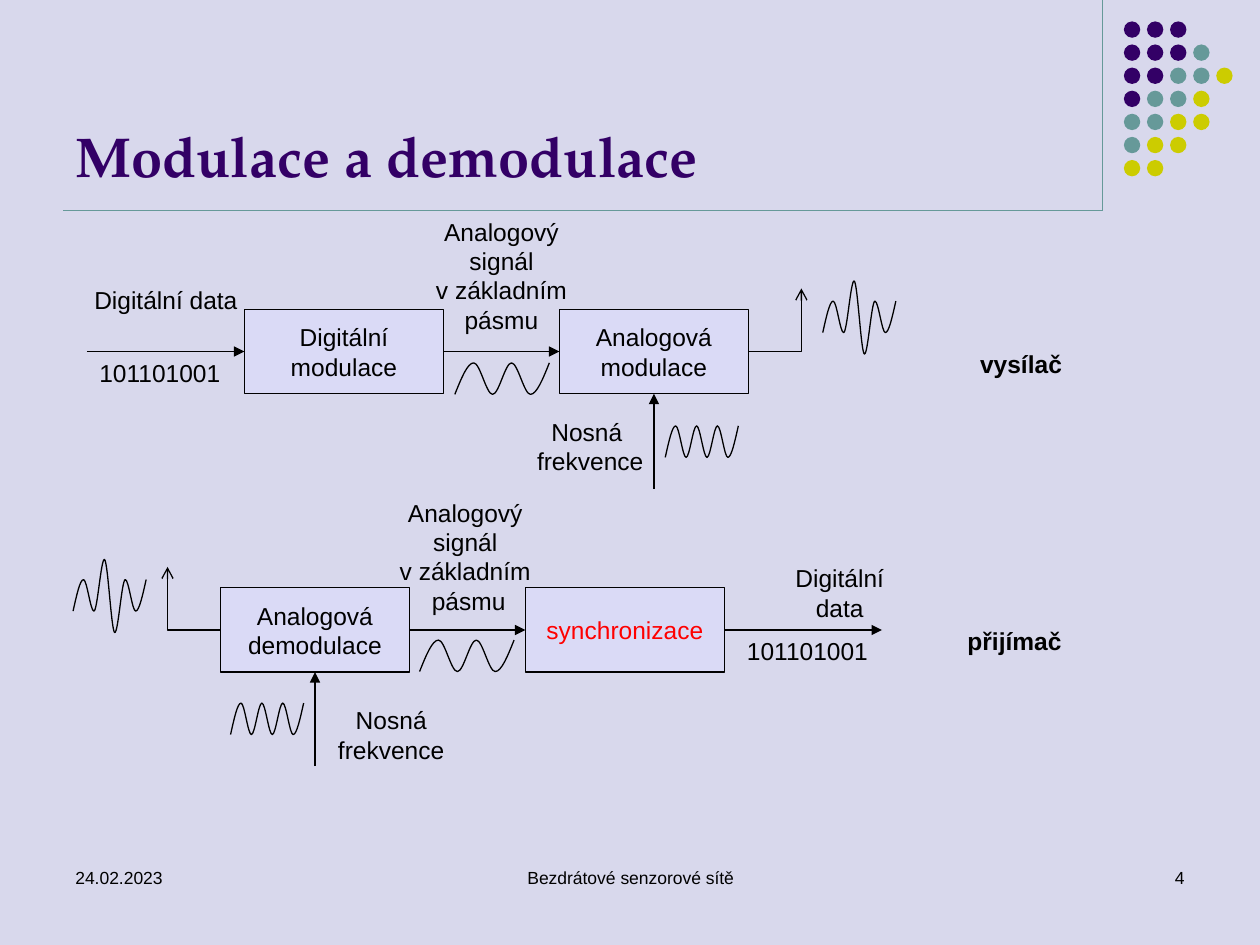
"""Build a slide that shows the modulation and demodulation signal chains."""
from dataclasses import dataclass
from typing import Optional

from lxml.etree import SubElement
from pptx import Presentation
from pptx.dml.color import RGBColor
from pptx.enum.shapes import MSO_CONNECTOR, MSO_SHAPE
from pptx.enum.text import MSO_ANCHOR, MSO_AUTO_SIZE, PP_ALIGN
from pptx.oxml.ns import qn
from pptx.shapes.autoshape import Shape
from pptx.shapes.connector import Connector
from pptx.slide import Slide
from pptx.util import Inches, Pt

BACKGROUND = RGBColor(0xD8, 0xD8, 0xEC)
BLOCK_FILL = RGBColor(0xDA, 0xDA, 0xF6)
BLACK = RGBColor(0x00, 0x00, 0x00)
RED = RGBColor(0xFF, 0x00, 0x00)
PURPLE = RGBColor(0x33, 0x00, 0x66)
TEAL = RGBColor(0x66, 0x99, 0x99)
YELLOW = RGBColor(0xCC, 0xCC, 0x00)

DOT_COLORS = {"P": PURPLE, "T": TEAL, "Y": YELLOW, "B": BACKGROUND}
DOT_ROWS = ("PPP", "PPPT", "PPTTY", "PTTY", "TTYYB", "TYYB", "YYBB", "-B-B")
DOT_PITCH = 0.55 / 3
DOT_SIZE = 0.13
BLOCK_HEIGHT = 0.67
LINE_WIDTH = Pt(0.75)

BASEBAND = (0.25, 0, 0.25, 0, 0.25, 0)
CARRIER = (0.25, 0, 0.25, 0, 0.25, 0, 0.25, 0)
MODULATED = (0.43, 0.18, 0.43, 0.02, 0.6, 0.18, 0.43, 0.18)

Point = tuple[float, float]


@dataclass(frozen=True)
class Block:
    name: str
    text: str
    left: float
    axis: float
    width: float
    color: RGBColor = BLACK


@dataclass(frozen=True)
class Wire:
    start: Point
    end: Point
    origin: str = ""
    target: str = ""
    target_site: int = 1


@dataclass(frozen=True)
class Label:
    text: str
    left: float
    top: float
    width: float
    height: float
    bold: bool = False
    align: PP_ALIGN = PP_ALIGN.CENTER


@dataclass(frozen=True)
class Wave:
    left: float
    top: float
    width: float
    levels: tuple[float, ...]


BLOCKS = (
    Block("synchronizer", "synchronizace", 4.17, 5, 1.58, RED),
    Block("demodulator", "Analogová\ndemodulace", 1.75, 5, 1.5),
    Block("digital", "Digitální\nmodulace", 1.94, 2.79, 1.58),
    Block("analog", "Analogová\nmodulace", 4.44, 2.79, 1.5),
)
WIRES = (
    Wire((5.75, 5), (7, 5), origin="synchronizer"),
    Wire((2.5, 6.08), (2.5, 5.33), target="demodulator", target_site=2),
    Wire((3.25, 5), (4.17, 5), origin="demodulator", target="synchronizer"),
    Wire((0.69, 2.79), (1.94, 2.79), target="digital"),
    Wire((5.19, 3.88), (5.19, 3.13), target="analog", target_site=2),
    Wire((3.52, 2.79), (4.44, 2.79), origin="digital", target="analog"),
)
ANTENNAS = (((1.75, 5), (1.33, 4.5)), ((5.94, 2.79), (6.36, 2.29)))
LABELS = (
    Label("Digitální\ndata", 6.21, 4.42, 0.91, 0.57),
    Label("Nosná\nfrekvence", 2.58, 5.55, 1.05, 0.57),
    Label("Analogový \nsignál \nv základním \npásmu", 3.07, 3.9, 1.3, 1.04),
    Label("101101001", 5.83, 5, 1.17, 0.33, align=PP_ALIGN.LEFT),
    Label("přijímač", 7.58, 4.92, 0.95, 0.34, True, PP_ALIGN.LEFT),
    Label("Digitální data", 0.65, 2.21, 1.34, 0.34, align=PP_ALIGN.LEFT),
    Label("Nosná \nfrekvence", 4.16, 3.26, 1.05, 0.57),
    Label("Analogový\nsignál\nv základním\npásmu", 3.34, 1.67, 1.28, 1.04),
    Label("101101001", 0.69, 2.79, 1.17, 0.33, align=PP_ALIGN.LEFT),
    Label("vysílač", 7.68, 2.72, 0.85, 0.34, True, PP_ALIGN.LEFT),
)
WAVES = (
    Wave(3.33, 5.08, 0.75, BASEBAND),
    Wave(1.83, 5.58, 0.58, CARRIER),
    Wave(0.58, 4.42, 0.58, MODULATED),
    Wave(3.61, 2.88, 0.75, BASEBAND),
    Wave(5.28, 3.38, 0.58, CARRIER),
    Wave(6.53, 2.21, 0.58, MODULATED),
)
FOOTERS = (
    Label("24.02.2023", 0.5, 6.83, 2.33, 0.5, align=PP_ALIGN.LEFT),
    Label("Bezdrátové senzorové sítě", 3.42, 6.83, 3.17, 0.5),
    Label("4", 7.17, 6.83, 2.33, 0.5, align=PP_ALIGN.RIGHT),
)


def write_text(box: Shape, text: str, *, size: float = 14, font: str = "Arial",
               color: RGBColor = BLACK, bold: bool = False, wrap: bool = False,
               align: PP_ALIGN = PP_ALIGN.CENTER,
               anchor: MSO_ANCHOR = MSO_ANCHOR.TOP) -> None:
    frame = box.text_frame
    frame.word_wrap = wrap
    frame.vertical_anchor = anchor
    for index, line in enumerate(text.split("\n")):
        para = frame.add_paragraph() if index else frame.paragraphs[0]
        para.alignment = align
        span = para.add_run()
        span.text = line
        span.font.name = font
        span.font.size = Pt(size)
        span.font.bold = bold
        span.font.color.rgb = color


def add_label(page: Slide, label: Label, **text_format) -> Shape:
    box = page.shapes.add_textbox(Inches(label.left), Inches(label.top),
                                  Inches(label.width), Inches(label.height))
    write_text(box, label.text, bold=label.bold, align=label.align, **text_format)
    return box


def add_block(page: Slide, block: Block) -> Shape:
    box = page.shapes.add_shape(
        MSO_SHAPE.RECTANGLE, Inches(block.left), Inches(block.axis - BLOCK_HEIGHT / 2),
        Inches(block.width), Inches(BLOCK_HEIGHT))
    box.shadow.inherit = False
    box.fill.solid()
    box.fill.fore_color.rgb = BLOCK_FILL
    box.line.color.rgb = BLACK
    box.line.width = LINE_WIDTH
    write_text(box, block.text, color=block.color, anchor=MSO_ANCHOR.MIDDLE)
    return box


def add_line(page: Slide, start: Point, end: Point, *, color: RGBColor = BLACK,
             arrow: Optional[str] = None, bent: bool = False) -> Connector:
    kind = MSO_CONNECTOR.ELBOW if bent else MSO_CONNECTOR.STRAIGHT
    line = page.shapes.add_connector(kind, *map(Inches, start + end))
    line.line.color.rgb = color
    line.line.width = LINE_WIDTH
    properties = line.element.spPr
    if bent:
        properties.find(qn("a:prstGeom")).set("prst", "bentConnector2")
    if arrow:
        SubElement(properties.find(qn("a:ln")), qn("a:tailEnd"), type=arrow)
    SubElement(properties, qn("a:effectLst"))
    return line


def round_corners(curve: Shape) -> None:
    """Turn the straight segments of an outline into level-topped Bezier arcs."""
    knots = [(int(point.get("x")), int(point.get("y")))
             for point in curve.element.iter(qn("a:pt"))]
    segments = list(curve.element.iter(qn("a:lnTo")))
    for index, segment in enumerate(segments):
        (left, begin), (right, end) = knots[index:index + 2]
        middle = (begin + end) // 2
        third = (right - left) // 3
        first_pull = middle if index == 0 else begin
        second_pull = middle if index == len(segments) - 1 else end
        arc = SubElement(segment.getparent(), qn("a:cubicBezTo"))
        for x, y in ((left + third, first_pull), (right - third, second_pull), (right, end)):
            SubElement(arc, qn("a:pt"), x=str(x), y=str(y))
        segment.getparent().replace(segment, arc)


def add_wave(page: Slide, wave: Wave) -> None:
    step = wave.width / (len(wave.levels) - 1)
    points = [(Inches(wave.left + index * step), Inches(wave.top + level))
              for index, level in enumerate(wave.levels)]
    builder = page.shapes.build_freeform(*points[0])
    builder.add_line_segments(points[1:], close=False)
    curve = builder.convert_to_shape()
    round_corners(curve)
    curve.shadow.inherit = False
    curve.fill.background()
    curve.line.color.rgb = BLACK
    curve.line.width = LINE_WIDTH


def add_dots(page: Slide) -> None:
    for row, codes in enumerate(DOT_ROWS):
        for column, code in enumerate(codes):
            if code not in DOT_COLORS:
                continue
            dot = page.shapes.add_shape(
                MSO_SHAPE.OVAL, Inches(8.92 + column * DOT_PITCH),
                Inches(0.17 + row * DOT_PITCH), Inches(DOT_SIZE), Inches(DOT_SIZE))
            dot.shadow.inherit = False
            dot.fill.solid()
            dot.fill.fore_color.rgb = DOT_COLORS[code]
            dot.line.fill.background()


def main() -> None:
    deck = Presentation()
    deck.slide_width, deck.slide_height = Inches(10), Inches(7.5)
    page = deck.slides.add_slide(deck.slide_layouts[6])
    page.background.fill.solid()
    page.background.fill.fore_color.rgb = BACKGROUND
    add_line(page, (8.75, 0), (8.75, 1.67), color=TEAL)
    add_dots(page)
    add_line(page, (0.5, 1.67), (8.75, 1.67), color=TEAL)
    title = Label("Modulace a demodulace", 0.5, 0.13, 8.25, 1.42, True, PP_ALIGN.LEFT)
    add_label(page, title, size=32, font="TeX Gyre Pagella", color=PURPLE,
              wrap=True, anchor=MSO_ANCHOR.BOTTOM)
    boxes = {block.name: add_block(page, block) for block in BLOCKS}
    for wire in WIRES:
        line = add_line(page, wire.start, wire.end, arrow="triangle")
        if wire.origin:
            line.begin_connect(boxes[wire.origin], 3)
        if wire.target:
            line.end_connect(boxes[wire.target], wire.target_site)
    for start, end in ANTENNAS:
        add_line(page, start, end, arrow="arrow", bent=True)
    for wave in WAVES:
        add_wave(page, wave)
    for label in LABELS:
        add_label(page, label).text_frame.auto_size = MSO_AUTO_SIZE.SHAPE_TO_FIT_TEXT
    for footer in FOOTERS:
        add_label(page, footer, size=10, wrap=True)
    deck.save("out.pptx")


if __name__ == "__main__":
    main()
